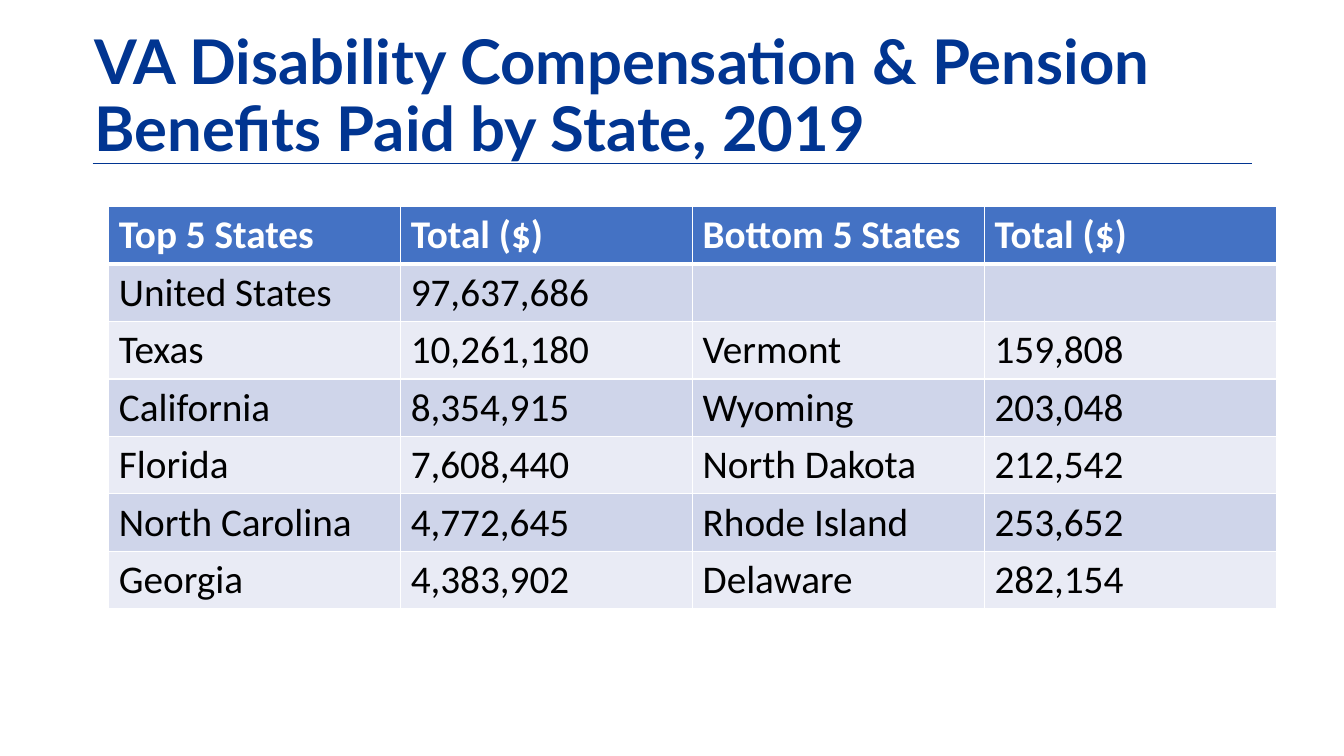
import dataclasses
import typing

import pptx
import pptx.dml.color
import pptx.enum.shapes
import pptx.enum.text
import pptx.oxml
import pptx.oxml.ns
import pptx.util

Inches = pptx.util.Inches
Pt = pptx.util.Pt


@dataclasses.dataclass(frozen=True)
class Theme:
    navy: str = "013591"
    head: str = "4472C4"
    bands: tuple[str, str] = ("CFD5EA", "E9EBF5")
    white: str = "FFFFFF"
    black: str = "000000"
    title: int = 44
    body: int = 28
    thin: int = 1
    thick: int = 3


@dataclasses.dataclass(frozen=True)
class Style:
    fill: str
    ink: str
    bold: bool
    top: int
    base: int


class Row(typing.NamedTuple):
    state: str
    total: str
    low: str = ""
    sum: str = ""


THEME = Theme()
TITLE = "VA Disability Compensation & Pension Benefits Paid by State, 2019"
ROWS = [
    Row("Top 5 States", "Total ($)", "Bottom 5 States", "Total ($)"),
    Row("United States", "97,637,686"),
    Row("Texas", "10,261,180", "Vermont", "159,808"),
    Row("California", "8,354,915", "Wyoming", "203,048"),
    Row("Florida", "7,608,440", "North Dakota", "212,542"),
    Row("North Carolina", "4,772,645", "Rhode Island", "253,652"),
    Row("Georgia", "4,383,902", "Delaware", "282,154"),
]


def tint(code: str) -> pptx.dml.color.RGBColor:
    return pptx.dml.color.RGBColor.from_string(code)


def format_font(font, ink: str, values: dict[str, typing.Any]) -> None:
    for name, value in values.items():
        setattr(font, name, value)
    font.color.rgb = tint(ink)


def draw_rule(slide) -> None:
    rule = slide.shapes.add_connector(
        pptx.enum.shapes.MSO_CONNECTOR.STRAIGHT,
        Inches(0.92), Inches(1.62), Inches(12.42), Inches(1.62))
    rule.line.color.rgb = tint(THEME.navy)
    rule.line.width = Pt(THEME.thin)
    pptx.oxml.ns.qn("a:effectLst")
    rule.element.spPr.append(pptx.oxml.parse_xml(
        f'<a:effectLst {pptx.oxml.ns.nsdecls("a")}/>'))


def draw_title(slide) -> None:
    box = slide.shapes.add_textbox(
        Inches(0.84), Inches(0.27), Inches(12.14), Inches(1.41))
    frame = box.text_frame
    frame.word_wrap = True
    frame.vertical_anchor = pptx.enum.text.MSO_ANCHOR.BOTTOM
    line = frame.paragraphs[0]
    line.line_spacing = 0.9
    run = line.add_run()
    run.text = TITLE
    format_font(run.font, THEME.navy,
                {"name": "Lato", "size": Pt(THEME.title), "bold": True})


def draw_edges(cell, style: Style) -> None:
    sides = {"L": THEME.thin, "R": THEME.thin,
             "T": style.top, "B": style.base}
    props = cell._tc.get_or_add_tcPr()
    for side, width in sides.items():
        props.append(pptx.oxml.parse_xml(
            f'<a:ln{side} {pptx.oxml.ns.nsdecls("a")} w="{Pt(width)}">'
            f'<a:solidFill><a:srgbClr val="{THEME.white}"/></a:solidFill>'
            f'</a:ln{side}>'))


def pick_style(index: int) -> Style:
    if index == 0:
        return Style(THEME.head, THEME.white, True, THEME.thin, THEME.thick)
    top = THEME.thick if index == 1 else THEME.thin
    fill = THEME.bands[(index - 1) % 2]
    return Style(fill, THEME.black, False, top, THEME.thin)


def fill_cell(cell, text: str, style: Style) -> None:
    draw_edges(cell, style)
    cell.fill.solid()
    cell.fill.fore_color.rgb = tint(style.fill)
    cell.text = text
    format_font(cell.text_frame.paragraphs[0].font, style.ink,
                {"name": "Calibri", "size": Pt(THEME.body),
                 "bold": style.bold})


def draw_table(slide) -> None:
    count = len(Row._fields)
    width, height = Inches(2.895), Inches(0.57)
    table = slide.shapes.add_table(
        len(ROWS), count, Inches(1.08), Inches(2.05),
        width * count, height * len(ROWS)).table
    for column in table.columns:
        column.width = width
    for index, row in enumerate(ROWS):
        table.rows[index].height = height
        for place, text in enumerate(row):
            fill_cell(table.cell(index, place), text, pick_style(index))


def main() -> None:
    deck = pptx.Presentation()
    deck.slide_width, deck.slide_height = Inches(13.33), Inches(7.5)
    slide = deck.slides.add_slide(deck.slide_layouts[6])
    # Heading with the rule below it
    draw_rule(slide)
    draw_title(slide)
    # Benefits by state
    draw_table(slide)
    deck.save("out.pptx")


if __name__ == "__main__":
    main()
